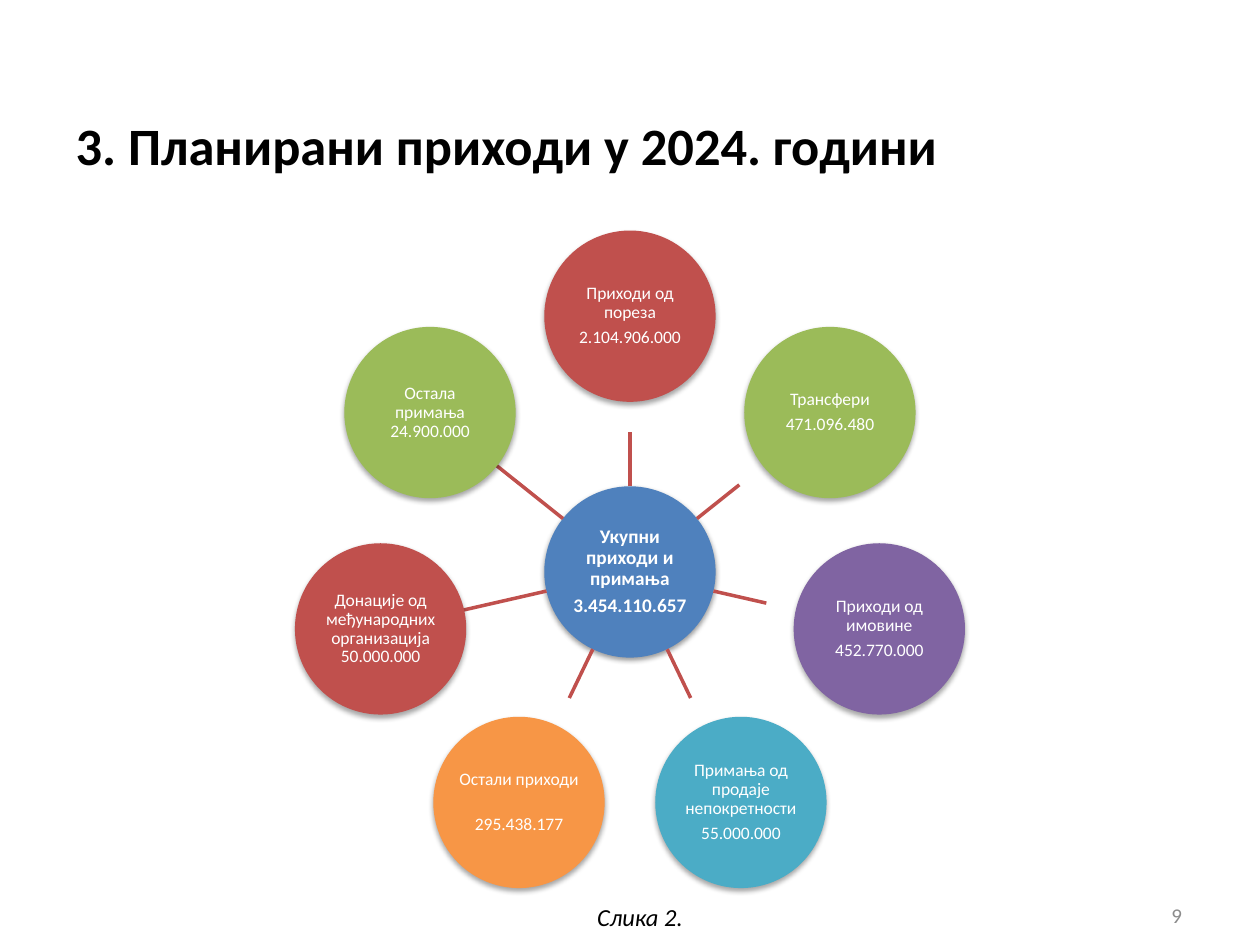
from math import cos, pi, sin

from lxml import etree
from pptx import Presentation
from pptx.dml.color import RGBColor
from pptx.enum.shapes import MSO_CONNECTOR, MSO_SHAPE
from pptx.enum.text import MSO_ANCHOR, MSO_AUTO_SIZE, PP_ALIGN
from pptx.oxml import parse_xml
from pptx.oxml.ns import nsdecls, qn
from pptx.util import Inches, Pt

# Content
TITLE = "3. Планирани приходи у 2024. години"
CAPTION = "Слика 2."
PAGE_NUMBER = "9"
TOTAL = ["Укупни приходи и примања", "3.454.110.657"]

SHORT_SPOKE, LONG_SPOKE = 1.11, 1.36  # distance of the outer end from the hub centre
# Clockwise from the top: paragraphs, colour, spoke end, space between paragraphs
REVENUES = [
    (["Приходи од пореза", "2.104.906.000"], "red", SHORT_SPOKE, 3.5),
    (["Трансфери", "471.096.480"], "green", SHORT_SPOKE, 3.5),
    (["Приходи од имовине", "452.770.000"], "purple", SHORT_SPOKE, 3.5),
    (["Примања од продаје непокретности", "55.000.000"], "teal", SHORT_SPOKE, 3.5),
    (["Остали приходи", "295.438.177"], "orange", SHORT_SPOKE, 14.5),
    (["Донације од међународних организација 50.000.000"], "red", LONG_SPOKE, 3.5),
    (["Остала примања 24.900.000"], "green", LONG_SPOKE, 3.5),
]

COLORS = {
    "black": "000000", "white": "FFFFFF", "gray": "8C8C8C", "blue": "4F81BD",
    "red": "C0504D", "green": "9BBB59", "purple": "8064A2", "teal": "4BACC6",
    "orange": "F79646",
}
FONT = "Calibri"
CENTER_X, CENTER_Y = 5, 4.54
RING_RADIUS = 2.03
DIAMETER = 1.36


def color(name):
    return RGBColor.from_string(COLORS[name])


def format_paragraph(paragraph, size, color_name, alignment, bold=False, italic=False):
    paragraph.alignment = alignment
    font = paragraph.font
    font.name, font.size, font.bold, font.italic = FONT, Pt(size), bold, italic
    font.color.rgb = color(color_name)


def polar(angle, radius):
    """Point at a clockwise angle from the top of the diagram."""
    return CENTER_X + radius * sin(angle), CENTER_Y - radius * cos(angle)


def add_shadow(shape, distance, opacity):
    shape.shadow.inherit = False
    effects = shape._element.spPr.find(qn("a:effectLst"))
    effects.append(parse_xml(
        f'<a:outerShdw {nsdecls("a")} blurRad="{Pt(3.1)}" dist="{Pt(distance)}" '
        f'dir="5400000" rotWithShape="0"><a:srgbClr val="{COLORS["black"]}">'
        f'<a:alpha val="{opacity * 1000}"/></a:srgbClr></a:outerShdw>'))


def add_circle(slide, center, lines, fill, size, gap, bold=False, shadow=(1.8, 35)):
    x, y = center
    circle = slide.shapes.add_shape(
        MSO_SHAPE.OVAL, Inches(x - DIAMETER / 2), Inches(y - DIAMETER / 2),
        Inches(DIAMETER), Inches(DIAMETER))
    circle.fill.solid()
    circle.fill.fore_color.rgb = color(fill)
    circle.line.fill.background()
    add_shadow(circle, *shadow)
    frame = circle.text_frame
    frame.word_wrap = True
    frame.vertical_anchor = MSO_ANCHOR.MIDDLE
    frame.margin_left = frame.margin_right = frame.margin_top = frame.margin_bottom = 0
    frame.text = "\n".join(lines)
    for paragraph in frame.paragraphs:
        paragraph.line_spacing = 0.9
        format_paragraph(paragraph, size, "white", PP_ALIGN.CENTER, bold=bold)
    for paragraph in frame.paragraphs[:-1]:
        paragraph.space_after = Pt(gap)


def add_spoke(slide, angle, end_radius):
    start, end = polar(angle, DIAMETER / 2), polar(angle, end_radius)
    spoke = slide.shapes.add_connector(
        MSO_CONNECTOR.STRAIGHT, *(Inches(value) for value in start + end))
    spoke.line.color.rgb = color("red")
    spoke.line.width = Pt(2)
    etree.SubElement(spoke._element.spPr, qn("a:effectLst"))


def add_label(slide, box, text, wrap, anchor, **style):
    label = slide.shapes.add_textbox(*(Inches(value) for value in box))
    frame = label.text_frame
    frame.word_wrap = wrap
    frame.vertical_anchor = anchor
    frame.text = text
    format_paragraph(frame.paragraphs[0], **style)


def main():
    presentation = Presentation()
    presentation.slide_width, presentation.slide_height = Inches(10), Inches(7.5)
    slide = presentation.slides.add_slide(presentation.slide_layouts[5])

    # Title
    title = slide.shapes.title
    title.left, title.top = Inches(0.5), Inches(0.69)
    title.width, title.height = Inches(7.26), Inches(0.92)
    title.text_frame.text = TITLE
    title.text_frame.auto_size = MSO_AUTO_SIZE.NONE
    title.text_frame.vertical_anchor = MSO_ANCHOR.MIDDLE
    format_paragraph(title.text_frame.paragraphs[0], 30, "black", PP_ALIGN.LEFT, bold=True)

    # Caption and page number
    add_label(slide, (4.64, 7.11, 0.94, 0.34), CAPTION, False, MSO_ANCHOR.TOP,
              size=14, color_name="black", alignment=PP_ALIGN.LEFT, italic=True)
    add_label(slide, (7.15, 7.06, 2.33, 0.4), PAGE_NUMBER, True, MSO_ANCHOR.MIDDLE,
              size=12, color_name="gray", alignment=PP_ALIGN.RIGHT)

    # Hub with the total, then the ring of revenue sources
    add_circle(slide, (CENTER_X, CENTER_Y), TOTAL, "blue", 11, 3.85,
               bold=True, shadow=(1.6, 38))
    for index, (lines, fill, spoke_end, gap) in enumerate(REVENUES):
        angle = 2 * pi * index / len(REVENUES)
        add_spoke(slide, angle, spoke_end)
        add_circle(slide, polar(angle, RING_RADIUS), lines, fill, 10, gap)

    presentation.save("out.pptx")


if __name__ == "__main__":
    main()
